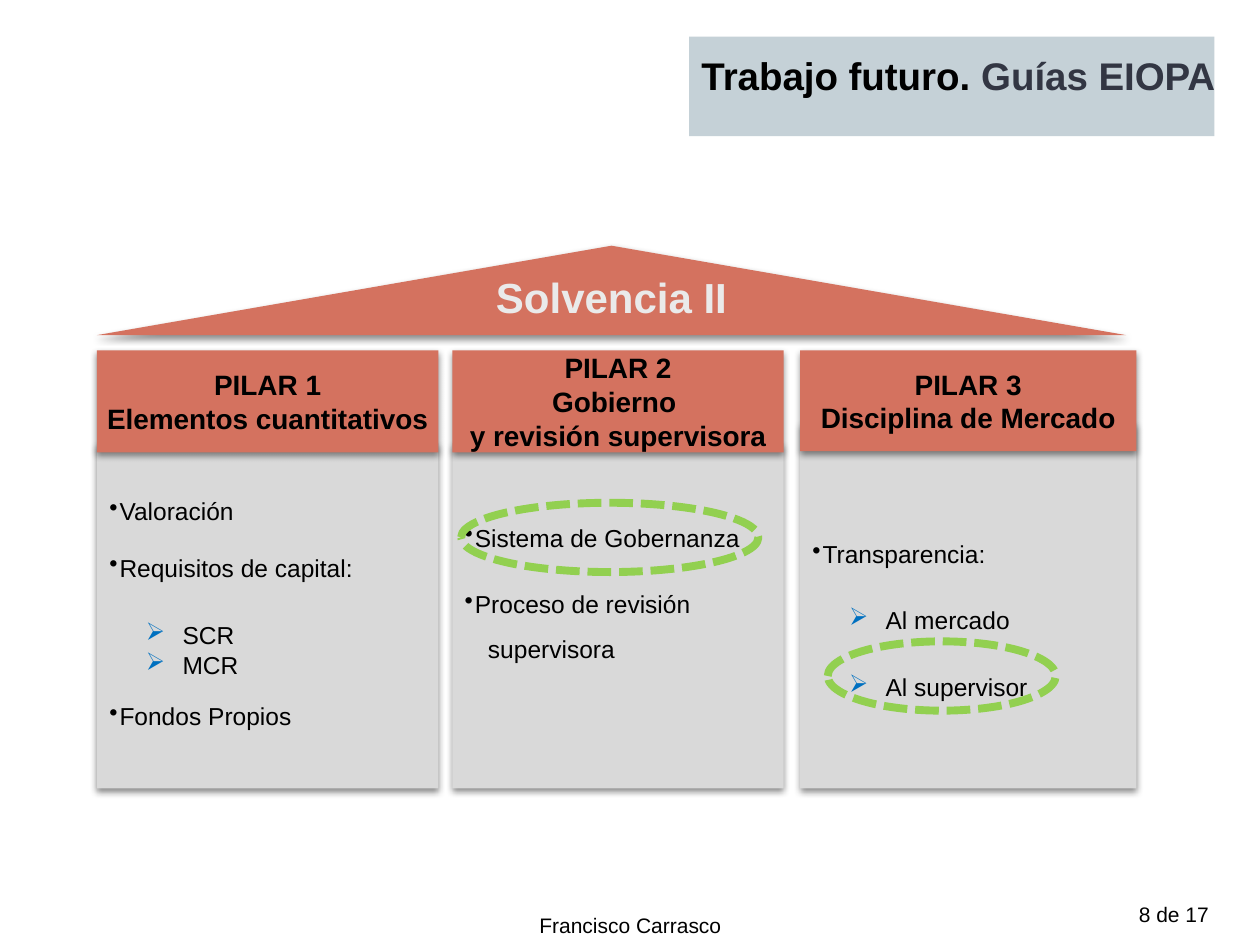
from dataclasses import dataclass

from lxml.etree import SubElement
from pptx import Presentation
from pptx.dml.color import RGBColor
from pptx.enum.dml import MSO_LINE
from pptx.enum.shapes import MSO_SHAPE
from pptx.enum.text import MSO_ANCHOR, PP_ALIGN
from pptx.oxml.ns import qn
from pptx.util import Pt

BLACK, CORAL, GREY = "000000", "D4725F", "D9D9D9"
HEAD_TOP = 200.2
BOTTOM = 450.5


@dataclass
class Item:
    text: str
    before: float = 0
    line: float = 0.8  # a multiple up to 2, points above that
    margin: float = 5.8
    hanging: float = 5.8
    bullet: str = "•"


@dataclass
class Pillar:
    left: float
    width: float
    head_height: float
    body_top: float
    heading: list[str]
    items: list[Item]
    inset_top: float = 3.6
    inset_bottom: float = 3.6


@dataclass
class Ring:
    left: float
    top: float
    width: float
    height: float = 39.6


def sub_item(text: str, before: float, line: float = 0.8) -> Item:
    return Item(text, before, line, margin=41.8, hanging=20.9, bullet="➢")


PILLARS = [
    Pillar(55.4, 195.1, 58.3, 253.4, ["PILAR 1", "Elementos cuantitativos"], [
        Item("Valoración"),
        Item("Requisitos de capital:", 19),
        sub_item("SCR", 25.4),
        sub_item("MCR", 3.5),
        Item("Fondos Propios", 4, 1.5),
    ]),
    Pillar(258.5, 189.4, 58.3, 253.4,
           ["PILAR 2", "Gobierno ", "y revisión supervisora"], [
               Item("Sistema de Gobernanza"),
               Item("Proceso de revisión", 12, 26),
               Item("supervisora", 0, 26, margin=13.3, hanging=0, bullet=""),
           ], inset_bottom=26.2),
    Pillar(457.2, 192.2, 57.6, 241.9, ["PILAR 3", "Disciplina de Mercado"], [
        Item("Transparencia:", 0, 26),
        sub_item("Al mercado", 12, 26),
        sub_item("Al supervisor", 12, 26),
    ], inset_top=10.6),
]
RINGS = [Ring(473, 366.5, 130.3), Ring(263.5, 287.3, 169.9)]


def rgb(color: str) -> RGBColor:
    return RGBColor.from_string(color)


def add_run(paragraph, text: str, size: float, color: str = BLACK, bold: bool = False):
    run = paragraph.add_run()
    run.text = text
    run.font.name = "Arial"
    run.font.size = Pt(size)
    run.font.bold = bold
    run.font.color.rgb = rgb(color)


def add_block(slide, kind, left: float, top: float, width: float, height: float, fill: str):
    block = slide.shapes.add_shape(kind, Pt(left), Pt(top), Pt(width), Pt(height))
    block.shadow.inherit = False
    block.fill.solid()
    block.fill.fore_color.rgb = rgb(fill)
    block.line.fill.background()
    block.text_frame.vertical_anchor = MSO_ANCHOR.MIDDLE
    return block


def cast_shadow(block):
    effects = block._element.spPr.find(qn("a:effectLst"))
    shadow = SubElement(effects, qn("a:outerShdw"), blurRad=str(Pt(4)), dist=str(Pt(2)),
                        dir="5400000", algn="t", rotWithShape="0")
    tint = SubElement(shadow, qn("a:srgbClr"), val=BLACK)
    SubElement(tint, qn("a:alpha"), val="45000")


def write_centered(frame, lines: list[str], size: float, color: str = BLACK):
    frame.word_wrap = False
    for index, line in enumerate(lines):
        paragraph = frame.add_paragraph() if index else frame.paragraphs[0]
        paragraph.alignment = PP_ALIGN.CENTER
        add_run(paragraph, line, size, color, bold=True)


def write_item(paragraph, item: Item):
    paragraph.alignment = PP_ALIGN.LEFT
    paragraph.line_spacing = item.line if item.line <= 2 else Pt(item.line)
    paragraph.space_before = Pt(item.before)
    properties = paragraph._p.get_or_add_pPr()
    properties.set("marL", str(Pt(item.margin)))
    properties.set("indent", str(-Pt(item.hanging)))
    if item.bullet:
        tint = SubElement(properties, qn("a:buClr"))
        SubElement(tint, qn("a:srgbClr"), val="0070C0" if item.bullet == "➢" else BLACK)
        SubElement(properties, qn("a:buChar"), char=item.bullet)
    add_run(paragraph, item.text, 14)


def add_body(slide, pillar: Pillar):
    body = add_block(slide, MSO_SHAPE.RECTANGLE, pillar.left, pillar.body_top,
                     pillar.width, BOTTOM - pillar.body_top, GREY)
    cast_shadow(body)
    frame = body.text_frame
    frame.word_wrap = True
    frame.margin_top, frame.margin_bottom = Pt(pillar.inset_top), Pt(pillar.inset_bottom)
    for index, item in enumerate(pillar.items):
        write_item(frame.add_paragraph() if index else frame.paragraphs[0], item)


def add_head(slide, pillar: Pillar):
    head = add_block(slide, MSO_SHAPE.RECTANGLE, pillar.left, HEAD_TOP,
                     pillar.width, pillar.head_height, CORAL)
    cast_shadow(head)
    write_centered(head.text_frame, pillar.heading, 16)


def add_roof(slide):
    roof = add_block(slide, MSO_SHAPE.ISOSCELES_TRIANGLE, 55.4, 140.4, 588.2, 51.1, CORAL)
    cast_shadow(roof)
    roof.text_frame.margin_top, roof.text_frame.margin_bottom = Pt(0), Pt(18)
    write_centered(roof.text_frame, ["Solvencia II"], 24, "EAEAEA")


def add_ring(slide, ring: Ring):
    oval = slide.shapes.add_shape(MSO_SHAPE.OVAL, Pt(ring.left), Pt(ring.top),
                                  Pt(ring.width), Pt(ring.height))
    oval.shadow.inherit = False
    oval.fill.background()
    oval.line.color.rgb = rgb("92D050")
    oval.line.width = Pt(4.5)
    oval.line.dash_style = MSO_LINE.SQUARE_DOT


def add_label(slide, left: float, top: float, width: float, height: float):
    """Add an empty wrapping text box and return its first paragraph."""
    label = slide.shapes.add_textbox(Pt(left), Pt(top), Pt(width), Pt(height))
    label.text_frame.word_wrap = True
    return label.text_frame.paragraphs[0]


def main():
    deck = Presentation()
    deck.slide_width, deck.slide_height = Pt(720), Pt(540)
    slide = deck.slides.add_slide(deck.slide_layouts[6])

    add_block(slide, MSO_SHAPE.RECTANGLE, 393.8, 20.9, 300.2, 56.9, "C5D1D7")
    add_run(add_label(slide, 643.7, 511.9, 71.3, 21.6), "8 de 17", 12)
    author = add_label(slide, 253.4, 517.7, 213.8, 21.6)
    author.alignment = PP_ALIGN.CENTER
    add_run(author, "Francisco Carrasco", 12)
    title = add_label(slide, 393.8, 25.9, 311.8, 51.1)
    add_run(title, "Trabajo futuro.", 22, bold=True)
    add_run(title, " Guías EIOPA", 22, "323643", bold=True)

    for pillar in PILLARS:
        add_body(slide, pillar)
    add_roof(slide)
    for pillar in PILLARS:
        add_head(slide, pillar)
    for ring in RINGS:
        add_ring(slide, ring)
    deck.save("out.pptx")


if __name__ == "__main__":
    main()
